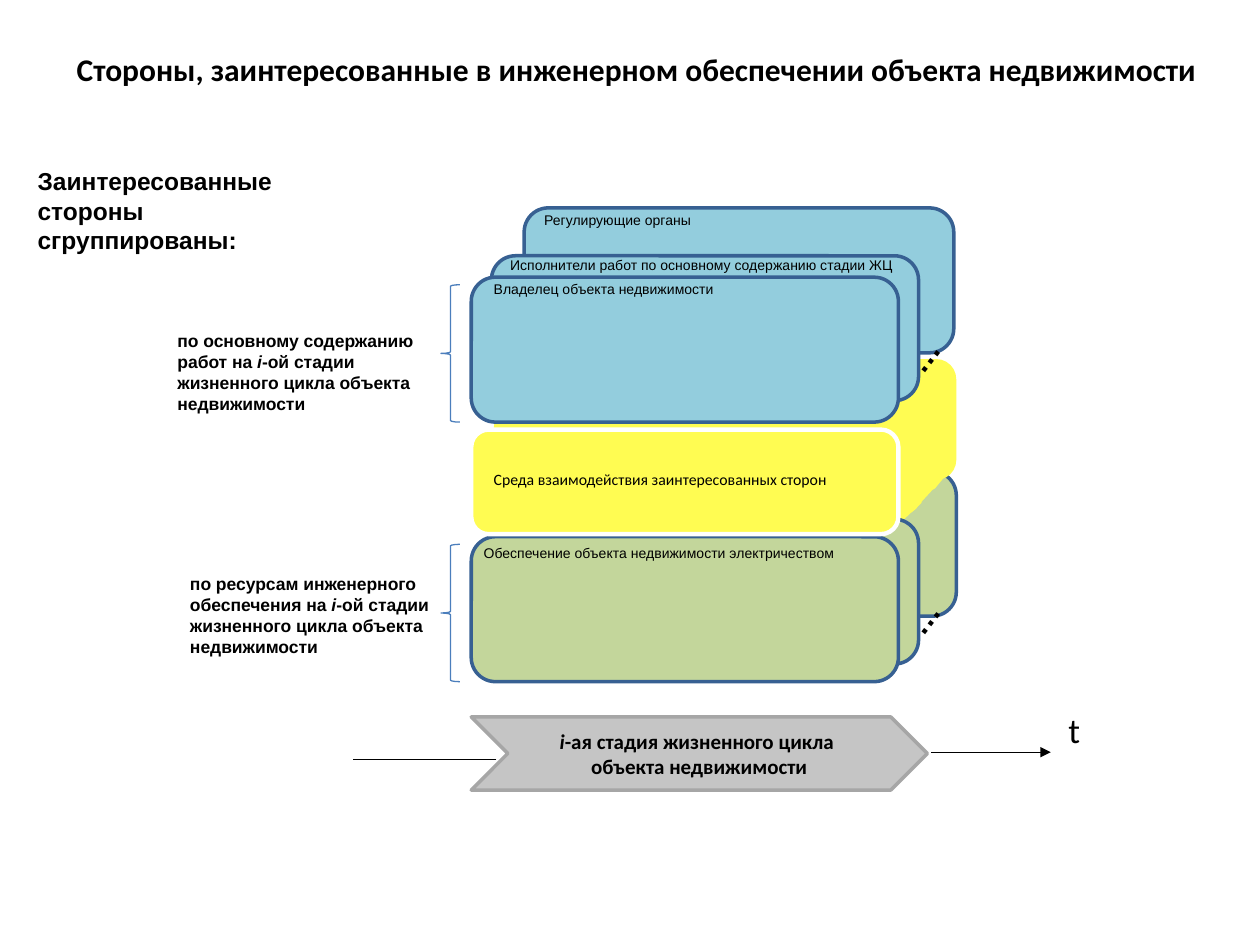
from pptx import Presentation
from pptx.dml.color import RGBColor
from pptx.enum.shapes import MSO_CONNECTOR, MSO_SHAPE
from pptx.enum.text import MSO_ANCHOR, MSO_AUTO_SIZE, PP_ALIGN
from pptx.oxml.ns import qn
from pptx.util import Inches, Pt
from lxml import etree

ROUND = MSO_SHAPE.ROUNDED_RECTANGLE
TRIANGLE = MSO_SHAPE.ISOSCELES_TRIANGLE
BRACE = MSO_SHAPE.LEFT_BRACE
CHEVRON = MSO_SHAPE.CHEVRON
STRAIGHT = MSO_CONNECTOR.STRAIGHT
MIDDLE, TOP = MSO_ANCHOR.MIDDLE, MSO_ANCHOR.TOP
CENTER, LEFT = PP_ALIGN.CENTER, PP_ALIGN.LEFT
GROW = MSO_AUTO_SIZE.SHAPE_TO_FIT_TEXT

THEME = {
    "black": RGBColor.from_string("000000"),
    "white": RGBColor.from_string("FFFFFF"),
    "green": RGBColor.from_string("C3D69B"),
    "blue": RGBColor.from_string("93CDDD"),
    "yellow": RGBColor.from_string("FFFC52"),
    "navy": RGBColor.from_string("376092"),
    "brace": RGBColor.from_string("4B7EBC"),
    "gray": RGBColor.from_string("A6A6A6"),
    "card": 8, "medium": 9, "note": 10, "stage": 12,
    "heading": 14, "title": 18, "axis": 20,
}

prs = Presentation()
prs.slide_width, prs.slide_height = Inches(10), Inches(7.5)
s = prs.slides.add_slide(prs.slide_layouts[6])


def add_shape(kind, box, fill=None, line=None, width=2, rotation=0):
    sp = s.shapes.add_shape(kind, *map(Inches, box))
    sp.shadow.inherit = False
    sp.rotation = rotation
    if fill:
        sp.fill.solid()
        sp.fill.fore_color.rgb = THEME[fill]
    else:
        sp.fill.background()
    if line:
        sp.line.color.rgb = THEME[line]
        sp.line.width = Pt(width)
    else:
        sp.line.fill.background()
    return sp


def add_text(text, box=None, size="card", font="Arial", bold=False,
             rotation=0, shape=None, align=LEFT, anchor=TOP):
    sp = shape or s.shapes.add_textbox(*map(Inches, box))
    tf = sp.text_frame
    tf.word_wrap = True
    tf.vertical_anchor = anchor
    if shape is None:
        tf.auto_size = GROW
        sp.rotation = rotation
    for i, row in enumerate(text.split("\n")):
        p = tf.add_paragraph() if i else tf.paragraphs[0]
        p.alignment = align
        for j, part in enumerate(row.split("*")):
            if part:
                r = p.add_run()
                r.text = part
                r.font.name, r.font.size = font, Pt(THEME[size])
                r.font.bold, r.font.italic = bold, j % 2 == 1
                r.font.color.rgb = THEME["black"]


add_shape(ROUND, (4.18, 3.74, 3.41, 1.15), "green", "navy")
add_shape(ROUND, (7.14, 3.7, 0.32, 0.24), "yellow", rotation=312.6)
add_shape(TRIANGLE, (7.06, 3.92, 0.23, 0.17), "yellow", rotation=316.8)
add_shape(ROUND, (4.18, 2.85, 3.41, 0.96), "yellow")
for x, y in [(3.9, 4.12), (3.74, 4.26)]:
    add_shape(ROUND, (x, y, 3.39, 1.15), "green", "navy")
add_shape(ROUND, (3.92, 3.25, 3.39, 0.83), "yellow")
add_shape(ROUND, (3.74, 3.41, 3.39, 0.83), "yellow", "white", 2.5)
for x, y, w in [(4.16, 1.65, 3.41), (3.9, 2.03, 3.39), (3.74, 2.2, 3.39)]:
    add_shape(ROUND, (x, y, w, 1.15), "blue", "navy")
add_shape(ROUND, (7.27, 3.62, 0.3, 0.2), "yellow", rotation=309.3)

for text, x, y, w in [
    ("Обеспечение объекта недвижимости электричеством", 3.74, 4.27, 3.07),
    ("Владелец объекта недвижимости", 3.82, 2.18, 3.07),
    ("Исполнители работ по основному содержанию стадии ЖЦ", 3.95, 1.99, 3.39),
    ("Регулирующие органы", 4.22, 1.63, 2.91),
]:
    add_text(text, (x, y, w, 0.24))
add_text("Среда взаимодействия заинтересованных сторон",
         (3.82, 3.68, 3.03, 0.25), "medium", "Calibri")

for y in (2.13, 4.21):
    add_text("…", (6.86, y, 1.69, 0.4), "title", bold=True, rotation=307.7)

for y in (2.26, 4.32):
    add_shape(BRACE, (3.5, y, 0.15, 1.09), line="brace", width=0.75)
for start, x, y, w in [
    ("по основному содержанию работ", 1.31, 2.57, 2.27),
    ("по ресурсам инженерного обеспечения", 1.41, 4.5, 2.5),
]:
    add_text(start + " на *i*-ой стадии жизненного цикла объекта недвижимости",
             (x, y, w, 0.77), "note", bold=True)

for x1, x2, y, arrow in [(7.39, 8.34, 5.97, True), (3.94, 2.8, 6.03, False)]:
    c = s.shapes.add_connector(STRAIGHT, Inches(x1), Inches(y), Inches(x2), Inches(y))
    c.line.color.rgb = THEME["black"]
    c.line.width = Pt(0.75)
    if arrow:
        etree.SubElement(c.line._get_or_add_ln(), qn("a:tailEnd"), type="triangle")
    etree.SubElement(c._element.spPr, qn("a:effectLst"))
add_text("t", (8.38, 5.57, 0.32, 0.44), "axis", "Calibri")

stage = add_shape(CHEVRON, (3.74, 5.69, 3.62, 0.58), "gray", "gray")
color = stage._element.spPr.find(qn("a:solidFill"))[0]
etree.SubElement(color, qn("a:alpha"), val="65000")
add_text("*i*-ая стадия жизненного цикла \nобъекта недвижимости", size="stage",
         font="Calibri", bold=True, shape=stage, align=CENTER, anchor=MIDDLE)

add_text("Стороны, заинтересованные в инженерном обеспечении объекта недвижимости",
         (0.51, 0.35, 9.51, 0.4), "title", "Calibri", bold=True)
add_text("Заинтересованные стороны сгруппированы:",
         (0.2, 1.27, 2.52, 0.57), "heading", bold=True)

prs.save("out.pptx")
